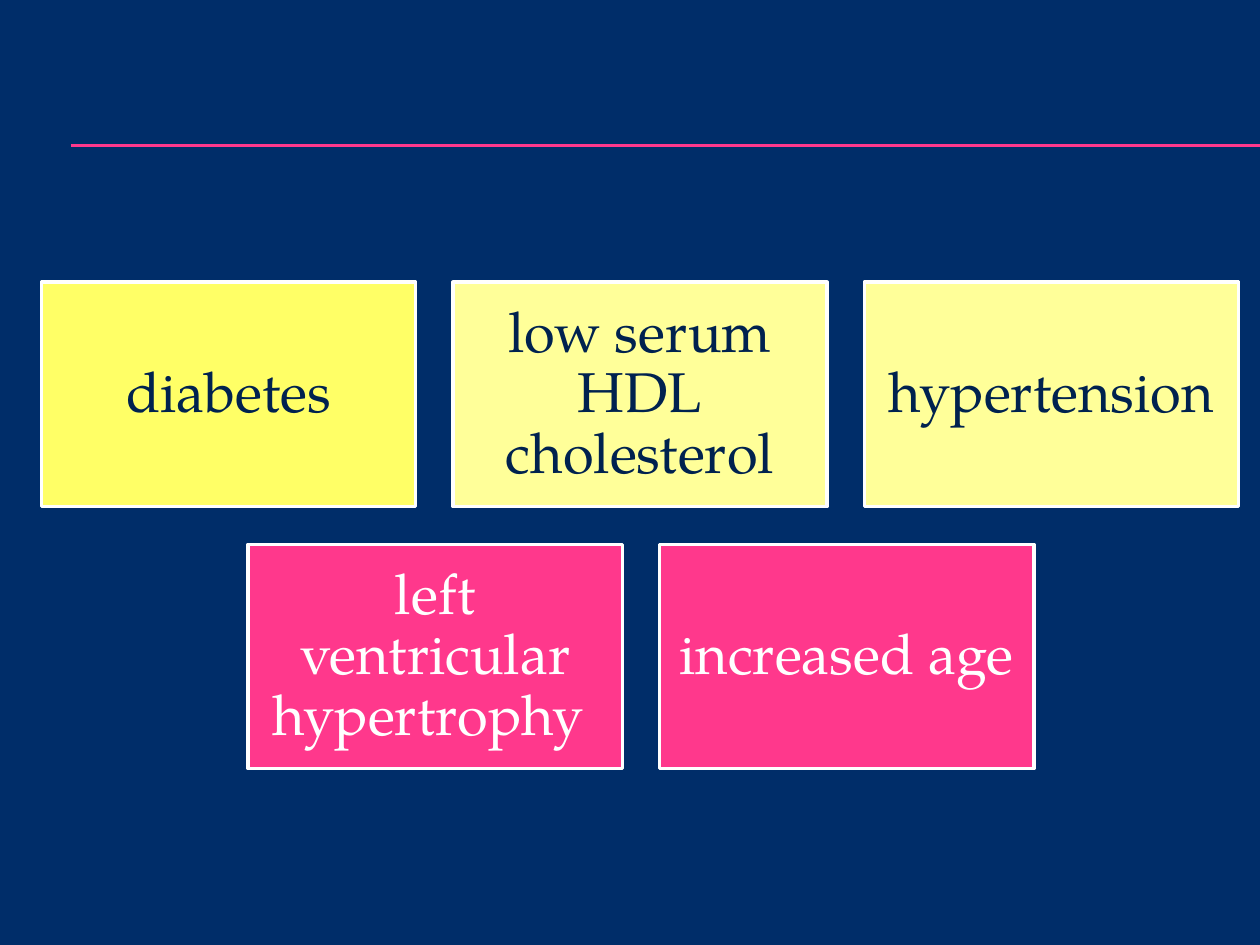
import pptx
import pptx.dml.color
import pptx.enum.shapes
import pptx.enum.text
import pptx.oxml
import pptx.util
from pptx.util import Inches

COLORS = {
    "navy": "002D69",
    "ink": "00224F",
    "white": "FFFFFF",
    "yellow": "FFFF66",
    "pale": "FFFF99",
    "pink": "FF388C",
}
WIDTH, HEIGHT = 2.97, 1.78
STEP = 3.265
ROWS = [
    (0.33, 2.24, "ink", [("diabetes", "yellow"),
                         ("low serum HDL cholesterol", "pale"),
                         ("hypertension", "pale")]),
    (1.97, 4.32, "white", [("left ventricular hypertrophy ", "pink"),
                           ("increased age", "pink")]),
]


def tint(name):
    return pptx.dml.color.RGBColor.from_string(COLORS[name])


def write(frame, text, font="TeX Gyre Pagella", size=32, color="ink",
          inset=0.13, spacing=0.9):
    """Fill a text frame with one centred paragraph."""
    frame.word_wrap = True
    frame.vertical_anchor = pptx.enum.text.MSO_ANCHOR.MIDDLE
    frame.margin_left = frame.margin_right = Inches(inset)
    frame.margin_top = frame.margin_bottom = Inches(inset)
    para = frame.paragraphs[0]
    para.alignment = pptx.enum.text.PP_ALIGN.CENTER
    para.line_spacing = spacing
    run = para.add_run()
    run.text = text
    run.font.name = font
    run.font.size = pptx.util.Pt(size)
    run.font.color.rgb = tint(color)


class Deck:
    def __init__(self):
        self.file = pptx.Presentation()
        self.file.slide_width = Inches(10)
        self.file.slide_height = Inches(7.5)
        self.slide = None

    def page(self, color):
        self.slide = self.file.slides.add_slide(self.file.slide_layouts[6])
        fill = self.slide.background.fill
        fill.solid()
        fill.fore_color.rgb = tint(color)

    def rule(self, left, right, top, color, width=0.75):
        """Draw a level line across the slide."""
        line = self.slide.shapes.add_connector(
            pptx.enum.shapes.MSO_CONNECTOR.STRAIGHT,
            Inches(left), Inches(top), Inches(right), Inches(top))
        line.line.color.rgb = tint(color)
        line.line.width = pptx.util.Pt(width)
        line._element.spPr.append(pptx.oxml.parse_xml(
            '<a:effectLst xmlns:a='
            '"http://schemas.openxmlformats.org/drawingml/2006/main"/>'))

    def box(self, left, top, text, fill, color):
        shape = self.slide.shapes.add_shape(
            pptx.enum.shapes.MSO_SHAPE.RECTANGLE,
            Inches(left), Inches(top), Inches(WIDTH), Inches(HEIGHT))
        shape.shadow.inherit = False
        shape.fill.solid()
        shape.fill.fore_color.rgb = tint(fill)
        shape.line.color.rgb = tint("white")
        shape.line.width = pptx.util.Pt(2)
        write(shape.text_frame, text, color=color)


def main():
    deck = Deck()
    deck.page("navy")
    for top in (1.15, 1.16):
        deck.rule(0.56, 10, top, "pink")
    for left, top, color, items in ROWS:
        for col, (text, fill) in enumerate(items):
            deck.box(left + col * STEP, top, text, fill, color)
    deck.file.save("out.pptx")


if __name__ == "__main__":
    main()
